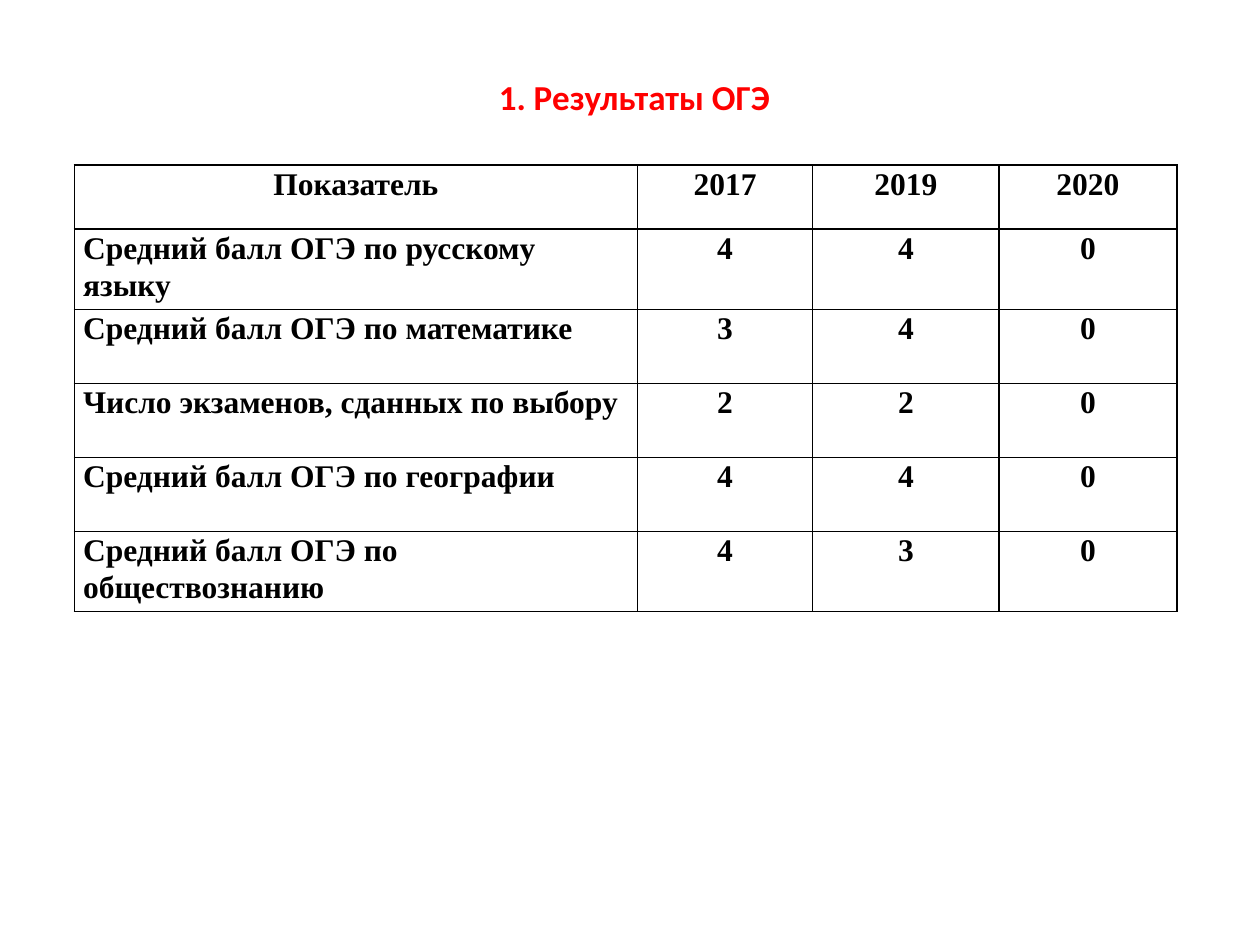
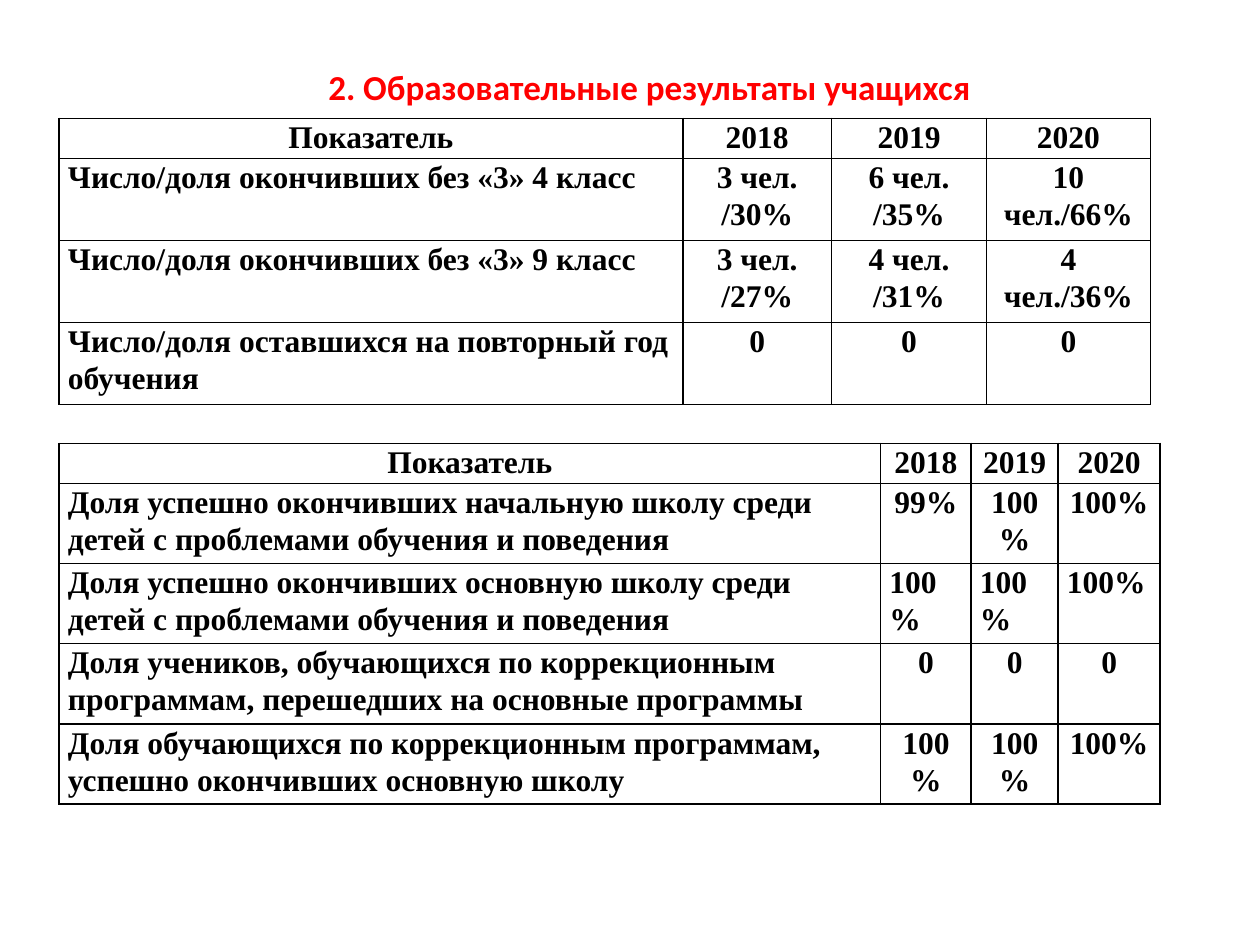
"""Build two slides of school results, each with a red title and ruled tables."""
from dataclasses import dataclass

from lxml import etree
from pptx import Presentation
from pptx import slide as s
from pptx import table as tb
from pptx import text as tx
from pptx import util as u
from pptx.dml import color as c
from pptx.enum import text as t
from pptx.oxml import ns
from pptx.text import text as tt

COLORS = {"title": "FF0000", "ink": "000000"}
TITLE_FONT = "Calibri"
TABLE_FONT = "Times New Roman"
CELL_MARGIN = 5.04
BORDER_WIDTH = 1
CENTER, LEFT = t.PP_ALIGN.CENTER, t.PP_ALIGN.LEFT


@dataclass(frozen=True)
class Title:
    text: str
    left: float
    top: float
    width: float
    height: float


@dataclass(frozen=True)
class Grid:
    left: float
    top: float
    columns: tuple[float, ...]
    heights: tuple[float, ...]
    years: tuple[str, ...]
    rows: tuple[tuple[str, ...], ...]
    left_aligned_row: int | None = None


@dataclass(frozen=True)
class Page:
    title: Title
    grids: tuple[Grid, ...]


PAGES = (
    Page(
        Title("1. Результаты ОГЭ", 44.6, 39.6, 635.8, 65.5),
        (
            Grid(
                42.5, 94.3, (321.8, 100.1, 106.6, 101.5),
                (36.7, 45.7, 42.3, 42.3, 42.3, 45.7),
                ("2017", "2019", "2020"),
                (
                    ("Средний балл ОГЭ по русскому языку", "4", "4", "0"),
                    ("Средний балл ОГЭ по математике", "3", "4", "0"),
                    ("Число экзаменов, сданных по выбору", "2", "2", "0"),
                    ("Средний балл ОГЭ по географии", "4", "4", "0"),
                    ("Средний балл ОГЭ по обществознанию", "4", "3", "0"),
                ),
            ),
        ),
    ),
    Page(
        Title("2. Образовательные результаты учащихся", 118.1, 33.8, 506.2, 31.7),
        (
            Grid(
                33.8, 67.7, (356.4, 85, 88.6, 93.6),
                (23, *[46.8] * 3),
                ("2018", "2019", "2020"),
                (
                    ("Число/доля окончивших без «3» 4 класс",
                     "3 чел. /30%", "6 чел. /35%", "10 чел./66%"),
                    ("Число/доля окончивших без «3» 9 класс",
                     "3 чел. /27%", "4 чел. /31%", "4 чел./36%"),
                    ("Число/доля оставшихся на повторный год обучения", "0", "0", "0"),
                ),
            ),
            Grid(
                33.8, 253.4, (469.4, 51.8, 49.7, 58.3),
                (22.8, *[45.7] * 4),
                ("2018", "2019", "2020"),
                (
                    ("Доля успешно окончивших начальную школу среди детей "
                     "с проблемами обучения и поведения", "99%", "100%", "100%"),
                    ("Доля успешно окончивших основную школу среди детей "
                     "с проблемами обучения и поведения", "100%", "100%", "100%"),
                    ("Доля учеников, обучающихся по коррекционным программам, "
                     "перешедших на основные программы", "0", "0", "0"),
                    ("Доля обучающихся по коррекционным программам, "
                     "успешно окончивших основную школу", "100%", "100%", "100%"),
                ),
                left_aligned_row=2,
            ),
        ),
    ),
)


def write(frame: tt.TextFrame, content: str, *, font: str, size: float, color: str,
          align: t.PP_ALIGN = CENTER, line_spacing: float | None = None,
          space_after: float = 0) -> None:
    """Put one bold paragraph into a text frame."""
    frame.word_wrap = True
    para = frame.paragraphs[0]
    para.alignment = align
    para.line_spacing = line_spacing
    para.space_after = u.Pt(space_after)
    span = para.add_run()
    span.text = content
    span.font.name = font
    span.font.size = u.Pt(size)
    span.font.bold = True
    span.font.color.rgb = c.RGBColor.from_string(color)


def draw_title(page: s.Slide, title: Title) -> None:
    """Draw the red slide title."""
    box = page.shapes.add_textbox(
        *map(u.Pt, (title.left, title.top, title.width, title.height)))
    write(box.text_frame, title.text, font=TITLE_FONT, size=20, color=COLORS["title"])


def rule_cell(cell: tb._Cell) -> None:
    """Give a cell thin borders on all sides and no fill."""
    properties = cell._tc.get_or_add_tcPr()
    for side in ("lnL", "lnR", "lnT", "lnB"):
        line = etree.SubElement(properties, ns.qn(f"a:{side}"), w=str(u.Pt(BORDER_WIDTH)))
        fill = etree.SubElement(line, ns.qn("a:solidFill"))
        etree.SubElement(fill, ns.qn("a:srgbClr"), val=COLORS["ink"])
    cell.fill.background()


def draw_grid(page: s.Slide, grid: Grid) -> None:
    """Draw a table with its header row and indicator rows."""
    lines = (("Показатель", *grid.years), *grid.rows)
    table = page.shapes.add_table(
        len(lines), len(grid.columns), u.Pt(grid.left), u.Pt(grid.top),
        u.Pt(sum(grid.columns)), u.Pt(sum(grid.heights))).table
    table.first_row = table.horz_banding = False
    for column, width in zip(table.columns, grid.columns):
        column.width = u.Pt(width)
    for row, height in zip(table.rows, grid.heights):
        row.height = u.Pt(height)
    for row_index, line in enumerate(lines):
        for column_index, content in enumerate(line):
            cell = table.cell(row_index, column_index)
            cell.margin_left = cell.margin_right = u.Pt(CELL_MARGIN)
            cell.margin_top = cell.margin_bottom = u.Pt(0)
            is_label = row_index > 0 and column_index == 0
            is_left = is_label or row_index == grid.left_aligned_row
            write(cell.text_frame, content, font=TABLE_FONT, size=18,
                  color=COLORS["ink"], align=LEFT if is_left else CENTER,
                  line_spacing=1.06, space_after=10)
            rule_cell(cell)


def main() -> None:
    """Build and save the deck."""
    deck = Presentation()
    deck.slide_width, deck.slide_height = u.Pt(720), u.Pt(540)
    for content in PAGES:
        page = deck.slides.add_slide(deck.slide_layouts[6])
        draw_title(page, content.title)
        for grid in content.grids:
            draw_grid(page, grid)
    deck.save("out.pptx")


if __name__ == "__main__":
    main()
